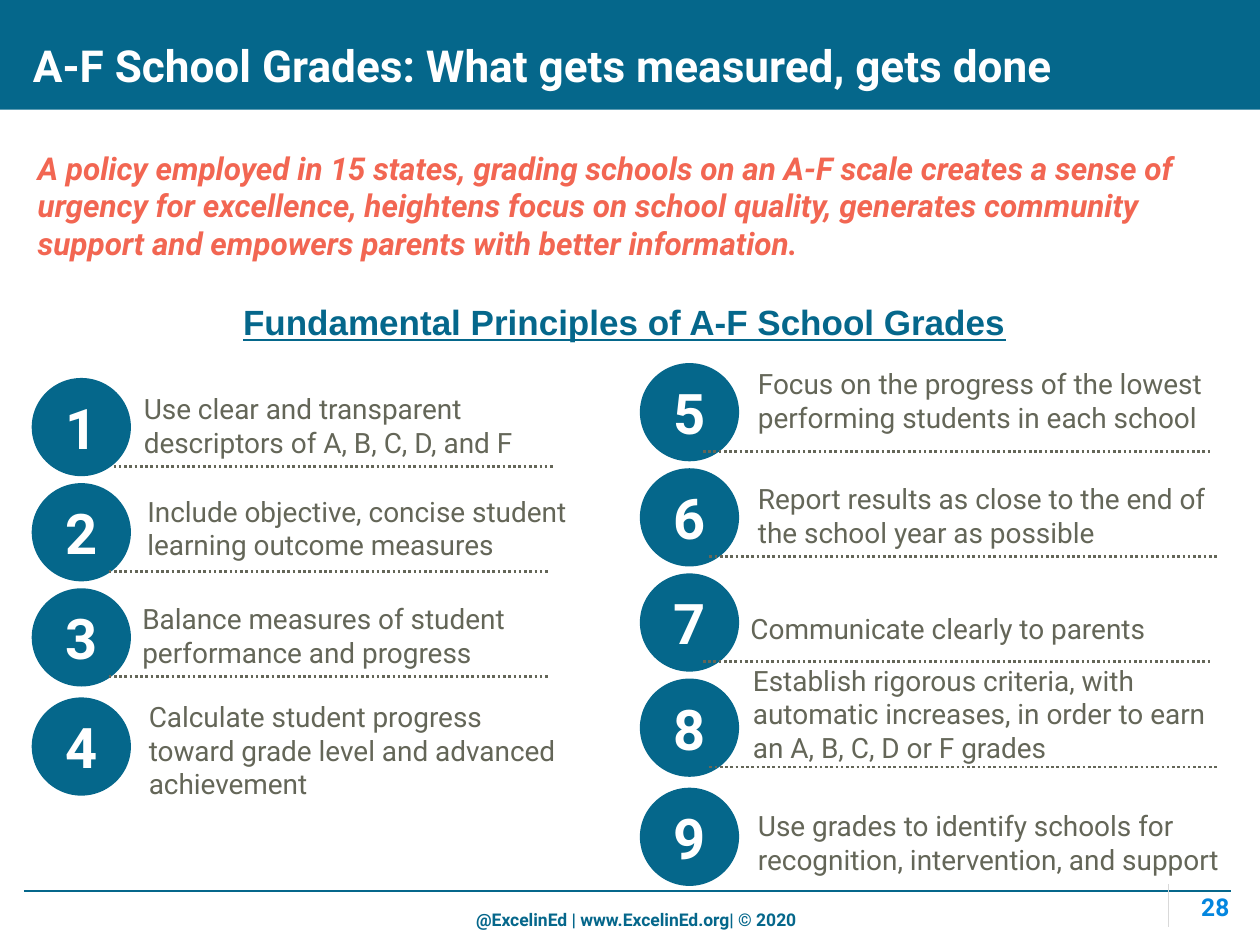
from lxml.etree import SubElement
from pptx import Presentation
from pptx.dml.color import RGBColor
from pptx.enum.dml import MSO_LINE
from pptx.enum.shapes import MSO_CONNECTOR, MSO_SHAPE
from pptx.enum.text import MSO_ANCHOR as Anchor, MSO_AUTO_SIZE as Fit, PP_ALIGN as Align
from pptx.oxml.ns import qn
from pptx.util import Cm, Pt

BLUE, GREY, CORAL, WHITE = "05678B", "646658", "F26652", "FFFFFF"
STEP, DISC_W, DISC_H, RULE_Y = 2.12, 2.0, 1.98, 1.78

# Each principle: text, offset from the disc (x, y), width, height, start of rule
LEFT = [
    ("Use clear and transparent descriptors of A, B, C, D, and F",
     2.01, 0.15, 9.58, 1.63, 1.65),
    ("Include objective, concise student learning outcome measures",
     2.08, 0.1, 9.6, 1.63, 1.55),
    ("Balance measures of student performance and progress",
     1.98, 0.15, 9.8, 1.63, 1.55),
    ("Calculate student progress toward grade level and advanced achievement",
     2.11, -0.08, 8.92, 2.31, None),
]
RIGHT = [
    ("Focus on the progress of the lowest performing students in each school",
     2.13, -0.05, 10.36, 1.63, 1.27),
    ("Report results as close to the end of the school year as possible",
     2.13, 0.15, 9.88, 1.63, 1.4),
    ("Communicate clearly to parents",
     1.98, 0.64, 8.97, 0.94, 1.27),
    ("Establish rigorous criteria, with automatic increases, in order to earn "
     "an A, B, C, D or F grades",
     2.03, -0.43, 9.88, 2.31, 1.4),
    ("Use grades to identify schools for recognition, intervention, and support",
     2.13, 0.3, 10.41, 1.63, None),
]


def rgb(code):
    return RGBColor.from_string(code)


def write(shape, text, size=16, color=GREY, font="Roboto", bold=False,
          italic=False, under=False, align=Align.LEFT, anchor=Anchor.TOP):
    frame = shape.text_frame
    frame.word_wrap = True
    frame.auto_size = Fit.NONE
    frame.vertical_anchor = anchor
    para = frame.paragraphs[0]
    para.alignment = align
    run = para.add_run()
    run.text = text
    face = run.font
    face.name, face.size, face.color.rgb = font, Pt(size), rgb(color)
    face.bold, face.italic, face.underline = bold, italic, under


def label(slide, x, y, w, h, text, **style):
    box = slide.shapes.add_textbox(Cm(x), Cm(y), Cm(w), Cm(h))
    write(box, text, **style)


def solid(slide, kind, x, y, w, h):
    shape = slide.shapes.add_shape(kind, Cm(x), Cm(y), Cm(w), Cm(h))
    shape.shadow.inherit = False
    shape.fill.solid()
    shape.fill.fore_color.rgb = rgb(BLUE)
    shape.line.fill.background()
    return shape


def rule(slide, x1, y1, x2, y2, color, width=0.75, dash=None):
    line = slide.shapes.add_connector(
        MSO_CONNECTOR.STRAIGHT, Cm(x1), Cm(y1), Cm(x2), Cm(y2))
    line.line.color.rgb = rgb(color)
    line.line.width = Pt(width)
    if dash:
        line.line.dash_style = dash
    SubElement(line.element.spPr, qn("a:effectLst"))


def header(slide, x, y, w, h):
    bar = solid(slide, MSO_SHAPE.RECTANGLE, x, y, w, h)
    title = slide.shapes.title
    title.element.addprevious(bar.element)
    title.left, title.top = Cm(x + 0.41), Cm(y + 0.64)
    title.width, title.height = Cm(22.86), Cm(1.98)
    write(title, "A-F School Grades: What gets measured, gets done",
          size=25.2, color=WHITE, bold=True)


def intro(slide, x, y, w):
    label(slide, x, y, w, 2.59,
          "A policy employed in 15 states, grading schools on an A-F scale "
          "creates a sense of urgency for excellence, heightens focus on school "
          "quality, generates community support and empowers parents with "
          "better information.",
          size=18, color=CORAL, bold=True, italic=True)
    label(slide, x + 4.14, y + 3.07, 16.31, 1.12,
          "Fundamental Principles of A-F School Grades",
          size=20, color=BLUE, font="Arial", bold=True, under=True)


def column(slide, x, y, items, first, length):
    """Numbered discs with their texts, parted by dotted rules."""
    for i, (text, dx, dy, w, h, start) in enumerate(items):
        last = start is None
        top = y + i * STEP + (0.08 if last else 0)
        disc = solid(slide, MSO_SHAPE.OVAL, x, top, DISC_W, DISC_H)
        write(disc, str(first + i), size=32, color=WHITE, bold=True,
              align=Align.CENTER, anchor=Anchor.MIDDLE)
        label(slide, x + dx, top + dy, w, h, text)
        if not last:
            rule(slide, x + start, top + RULE_Y, x + start + length,
                 top + RULE_Y, GREY, 1.5, MSO_LINE.ROUND_DOT)


def footer(slide, x, y, w):
    rule(slide, x, y, x + w, y, BLUE)
    label(slide, x + 8.23, y + 0.23, 7.59, 0.69,
          "@ExcelinEd | www.ExcelinEd.org| © 2020",
          size=10, color=BLUE, bold=True, align=Align.RIGHT)
    rule(slide, x + 23.07, y - 0.13, x + 23.07, y + 0.73, "D9D9D9")
    label(slide, x + 23.12, y - 0.1, 1.8, 0.84, "28",
          size=14, color="0386DF", bold=True, align=Align.CENTER)


def main():
    deck = Presentation()
    deck.slide_width, deck.slide_height = Cm(25.4), Cm(19.05)
    slide = deck.slides.add_slide(deck.slide_layouts[5])
    header(slide, 0, 0, 25.4, 2.21)
    footer(slide, 0.48, 17.96, 24.33)
    column(slide, 0.64, 7.62, LEFT, 1, 8.86)
    column(slide, 12.9, 7.32, RIGHT, 5, 10.24)
    intro(slide, 0.51, 2.87, 23.9)
    deck.save("out.pptx")


if __name__ == "__main__":
    main()
